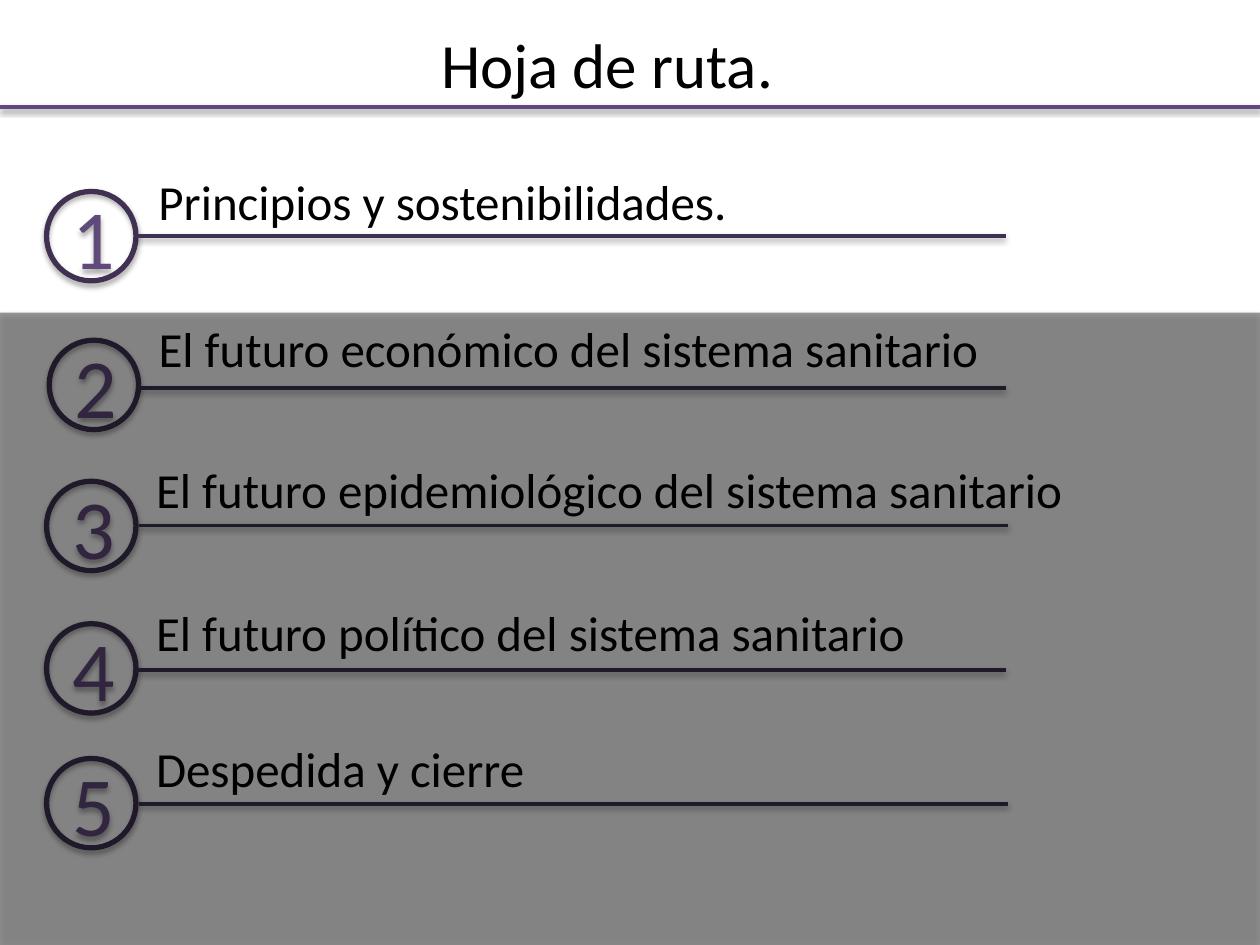
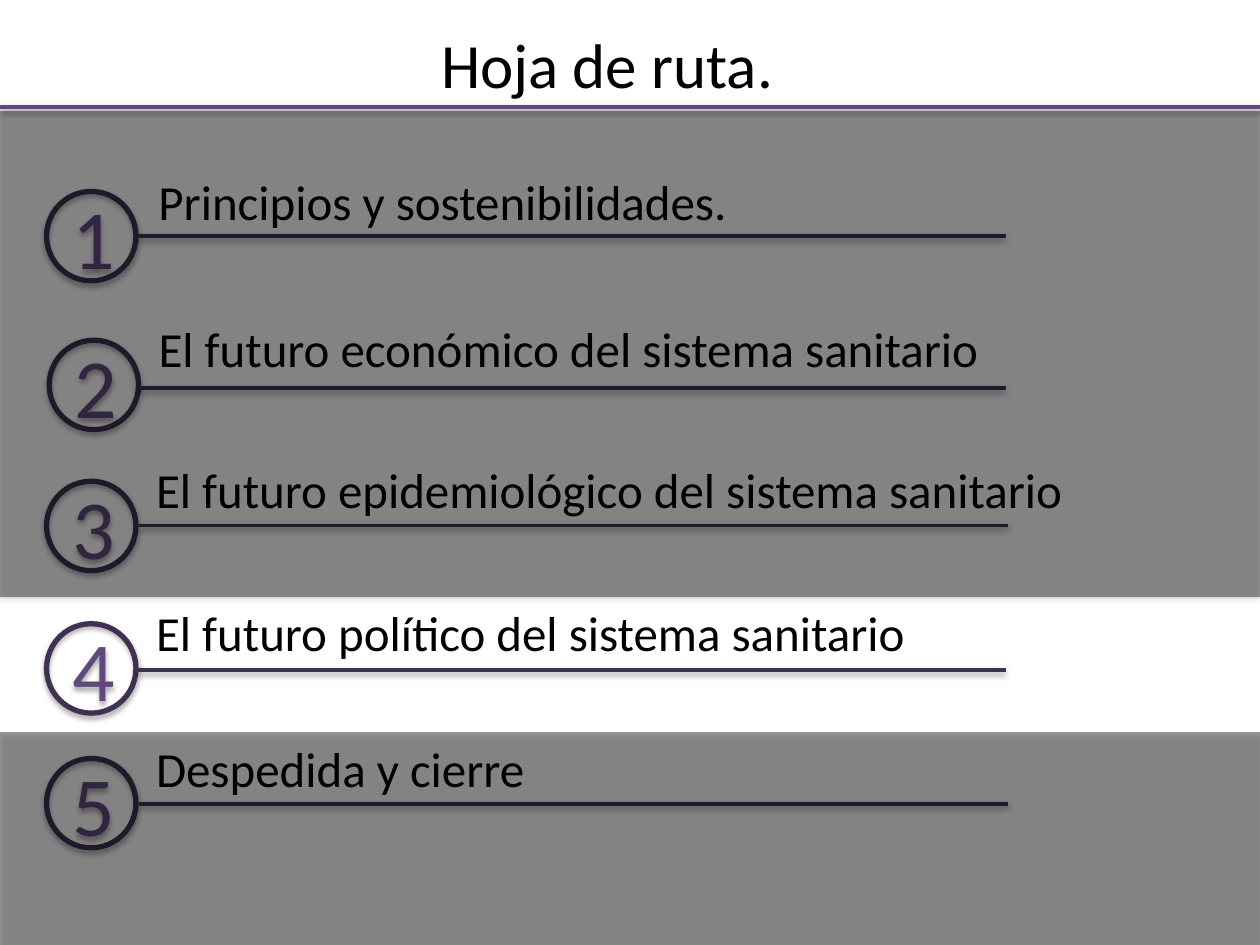
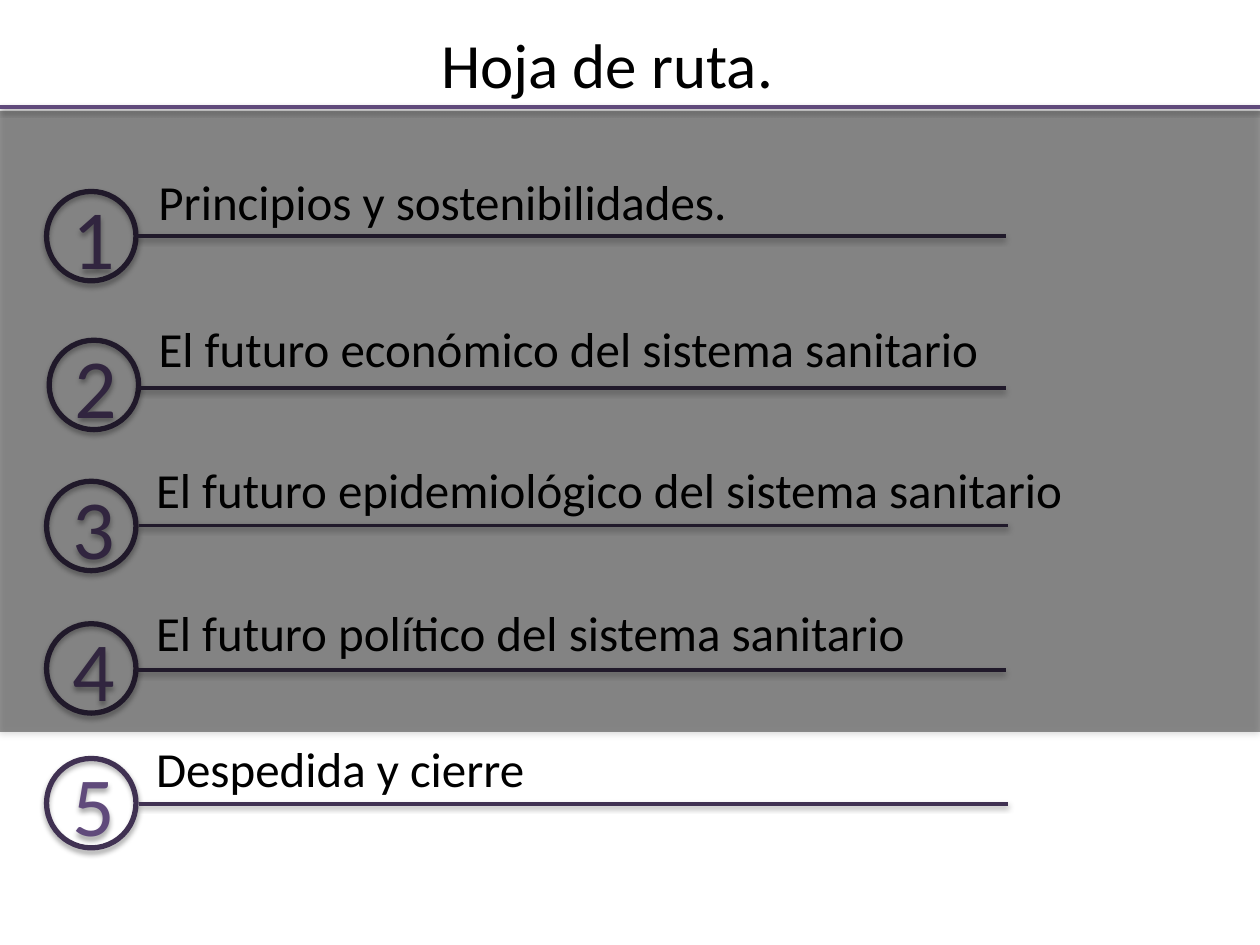
from lxml import etree
from pptx import Presentation
from pptx.dml.color import RGBColor
from pptx.enum import shapes, text
from pptx.oxml import ns
from pptx.util import Pt

WIDE, HIGH = 720, 540
INK, PLUM, DARK = "000000", "604A7B", "403152"
FONT = "Calibri"
SIZE = 51.1
HEAD = 63.36
REACH = 496.8

STEPS = [
    ("Principios y sostenibilidades.", 94.3, 83.5, 342.7, 26.6, 109.4, 77.8, 134.9),
    ("El futuro económico del sistema sanitario", 178.6, 83.5, 488.2, 28.1, 194.4, 77.8, 221.8),
    ("El futuro epidemiológico del sistema sanitario", 259.2, 82.1, 537.8, 26.6, 275, 79.2, 300.2),
    ("El futuro político del sistema sanitario", 340.6, 82.1, 447.1, 26.6, 356.4, 77.8, 383),
    ("Despedida y cierre", 418.3, 82.1, 226.8, 26.6, 433.4, 79.2, 459.4),
]
VIEWS = [
    [(178.6, HIGH)],
    [(418.3, HIGH), (HEAD, 341.3)],
    [(HEAD, 418.3)],
]


def tint(code):
    return RGBColor.from_string(code)


def cast(shape, dist, alpha):
    root = shape._element.spPr
    for old in root.findall(ns.qn("a:effectLst")):
        root.remove(old)
    group = etree.SubElement(root, ns.qn("a:effectLst"))
    outer = etree.SubElement(group, ns.qn("a:outerShdw"), blurRad="40000",
                             dist=str(dist), dir="5400000", rotWithShape="0")
    color = etree.SubElement(outer, ns.qn("a:srgbClr"), val=INK)
    etree.SubElement(color, ns.qn("a:alpha"), val=str(alpha * 1000))


def write(shape, words, size, color, align=text.PP_ALIGN.LEFT):
    para = shape.text_frame.paragraphs[0]
    para.alignment = align
    run = para.add_run()
    run.text = words
    run.font.name = FONT
    run.font.size = Pt(size)
    run.font.color.rgb = tint(color)


def rule(slide, left, right, y, color):
    line = slide.shapes.add_connector(shapes.MSO_CONNECTOR.STRAIGHT,
                                      Pt(left), Pt(y), Pt(right), Pt(y))
    line.line.color.rgb = tint(color)
    line.line.width = Pt(2)
    cast(line, 20000, 38)


def title(slide, words):
    head = slide.shapes.title
    head.left, head.top, head.width, head.height = Pt(244.8), Pt(10.8), Pt(475.2), Pt(51.1)
    frame = head.text_frame
    frame.word_wrap = True
    frame.auto_size = text.MSO_AUTO_SIZE.SHAPE_TO_FIT_TEXT
    frame.vertical_anchor = text.MSO_ANCHOR.TOP
    write(head, words, 36, INK)


def badge(slide, left, top, number):
    ring = slide.shapes.add_shape(shapes.MSO_SHAPE.OVAL,
                                  Pt(left), Pt(top), Pt(SIZE), Pt(SIZE))
    ring.fill.background()
    ring.line.color.rgb = tint(DARK)
    ring.line.width = Pt(3)
    cast(ring, 23000, 35)
    ring.text_frame.vertical_anchor = text.MSO_ANCHOR.MIDDLE
    write(ring, str(number), 48, PLUM, text.PP_ALIGN.CENTER)


def label(slide, left, top, width, words):
    box = slide.shapes.add_textbox(Pt(left), Pt(top), Pt(width), Pt(41))
    box.text_frame.word_wrap = False
    box.text_frame.auto_size = text.MSO_AUTO_SIZE.SHAPE_TO_FIT_TEXT
    write(box, words, 28, INK)


def shade(slide, top, bottom):
    band = slide.shapes.add_shape(shapes.MSO_SHAPE.RECTANGLE,
                                  0, Pt(top), Pt(WIDE), Pt(bottom - top))
    band.fill.solid()
    band.fill.fore_color.rgb = tint(INK)
    color = band._element.spPr.find(ns.qn("a:solidFill"))[0]
    etree.SubElement(color, ns.qn("a:alpha"), val="40000")
    band.line.fill.background()
    cast(band, 23000, 35)


def agenda(slide):
    title(slide, "Hoja de ruta.")
    rule(slide, 0, WIDE, 61.2, PLUM)
    for number, step in enumerate(STEPS, 1):
        words, top, left, width, ring_x, ring_y, start, y = step
        badge(slide, ring_x, ring_y, number)
        rule(slide, start, start + REACH, y, DARK)
        label(slide, left, top, width, words)


def main():
    deck = Presentation()
    deck.slide_width, deck.slide_height = Pt(WIDE), Pt(HIGH)
    for bands in VIEWS:
        slide = deck.slides.add_slide(deck.slide_layouts[5])
        agenda(slide)
        for top, bottom in bands:
            shade(slide, top, bottom)
    deck.save("out.pptx")


if __name__ == "__main__":
    main()
